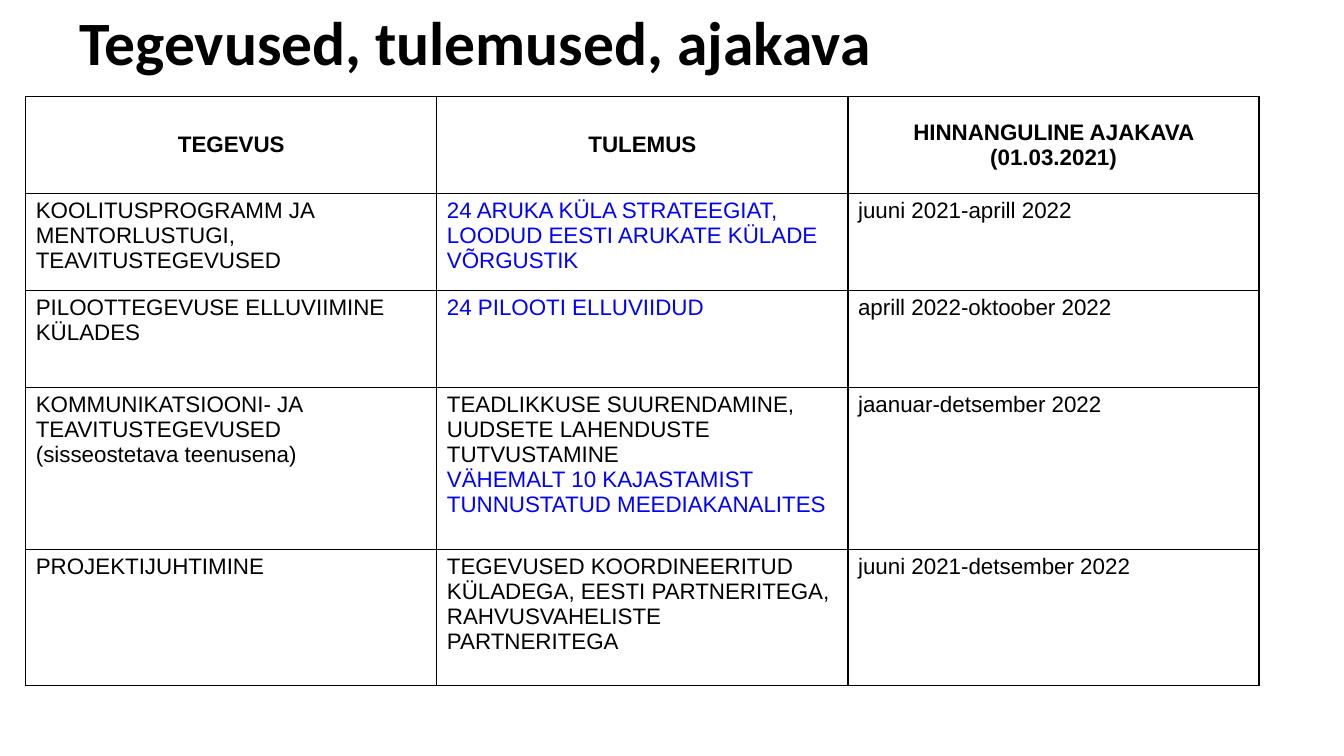
"""Build a slide with a table of project activities, results and schedule."""
from dataclasses import dataclass

from lxml import etree
from pptx import Presentation
from pptx.dml.color import RGBColor
from pptx.enum.text import MSO_ANCHOR, PP_ALIGN
from pptx.oxml.ns import qn
from pptx.slide import Slide
from pptx.table import _Cell
from pptx.util import Cm, Pt

LEFT, CENTER = PP_ALIGN.LEFT, PP_ALIGN.CENTER
TOP, MIDDLE = MSO_ANCHOR.TOP, MSO_ANCHOR.MIDDLE
TITLE_ONLY = 5

COLORS = {"text": "000000", "target": "0000FF", "border": "000000"}
HEADINGS = ("TEGEVUS", "TULEMUS", "HINNANGULINE AJAKAVA (01.03.2021)")
COLUMN_WIDTH = Cm(10.36)
HEADING_HEIGHT = Cm(2.44)


@dataclass(frozen=True)
class Line:
    """One paragraph of a table cell."""
    text: str
    color: str = "text"
    bold: bool = False


@dataclass(frozen=True)
class Activity:
    """One project activity with its results, schedule and row height in cm."""
    name: str
    results: tuple[Line, ...]
    schedule: str
    height: float


ACTIVITIES = (
    Activity(
        "KOOLITUSPROGRAMM JA MENTORLUSTUGI, TEAVITUSTEGEVUSED",
        (Line("24 ARUKA KÜLA STRATEEGIAT, LOODUD EESTI ARUKATE KÜLADE VÕRGUSTIK", "target"),),
        "juuni 2021-aprill 2022", 2.44),
    Activity(
        "PILOOTTEGEVUSE ELLUVIIMINE KÜLADES",
        (Line("24 PILOOTI ELLUVIIDUD", "target"),),
        "aprill 2022-oktoober 2022", 2.44),
    Activity(
        "KOMMUNIKATSIOONI- JA TEAVITUSTEGEVUSED (sisseostetava teenusena)",
        (Line("TEADLIKKUSE SUURENDAMINE, UUDSETE LAHENDUSTE TUTVUSTAMINE"),
         Line("VÄHEMALT 10 KAJASTAMIST TUNNUSTATUD MEEDIAKANALITES", "target")),
        "jaanuar-detsember 2022", 4.08),
    Activity(
        "PROJEKTIJUHTIMINE",
        (Line("TEGEVUSED KOORDINEERITUD KÜLADEGA, EESTI PARTNERITEGA, "
              "RAHVUSVAHELISTE PARTNERITEGA"),),
        "juuni 2021-detsember 2022", 3.44),
)


def add_borders(cell: _Cell) -> None:
    """Draw a thin solid line on all four sides of a cell."""
    properties = cell._tc.get_or_add_tcPr()
    for position, side in enumerate(("a:lnL", "a:lnR", "a:lnT", "a:lnB")):
        border = etree.Element(qn(side), w=str(Pt(1)))
        fill = etree.SubElement(border, qn("a:solidFill"))
        etree.SubElement(fill, qn("a:srgbClr"), val=COLORS["border"])
        properties.insert(position, border)


def fill_cell(cell: _Cell, lines: tuple[Line, ...], align: PP_ALIGN, anchor: MSO_ANCHOR) -> None:
    """Write and format the paragraphs of a cell."""
    cell.fill.background()
    add_borders(cell)
    cell.vertical_anchor = anchor
    cell.text = "\n".join(line.text for line in lines)
    for paragraph, line in zip(cell.text_frame.paragraphs, lines):
        paragraph.alignment = align
        paragraph.font.name = "Arial"
        paragraph.font.size = Pt(16)
        paragraph.font.bold = line.bold
        paragraph.font.color.rgb = RGBColor.from_string(COLORS[line.color])


def add_title(slide: Slide) -> None:
    """Place and format the slide title."""
    title = slide.shapes.title
    title.left, title.top, title.width, title.height = Cm(1.75), Cm(-0.69), Cm(29.21), Cm(3.68)
    title.text_frame.text = "Tegevused, tulemused, ajakava"
    title.text_frame.vertical_anchor = MIDDLE
    heading = title.text_frame.paragraphs[0]
    heading.alignment = LEFT
    heading.line_spacing = 0.9
    heading.font.name = "Calibri"
    heading.font.size = Pt(44)
    heading.font.bold = True
    heading.font.color.rgb = RGBColor.from_string(COLORS["text"])


def add_schedule(slide: Slide) -> None:
    """Add the table with one row per activity below the headings."""
    heights = [HEADING_HEIGHT, *(Cm(activity.height) for activity in ACTIVITIES)]
    schedule = slide.shapes.add_table(
        len(heights), len(HEADINGS), Cm(0.65), Cm(2.44),
        COLUMN_WIDTH * len(HEADINGS), sum(heights)).table
    schedule.first_row = schedule.horz_banding = False
    for column in schedule.columns:
        column.width = COLUMN_WIDTH
    for row, height in zip(schedule.rows, heights):
        row.height = height

    for column_index, heading in enumerate(HEADINGS):
        fill_cell(schedule.cell(0, column_index), (Line(heading, bold=True),), CENTER, MIDDLE)
    for row_index, activity in enumerate(ACTIVITIES, start=1):
        contents = ((Line(activity.name),), activity.results, (Line(activity.schedule),))
        for column_index, lines in enumerate(contents):
            fill_cell(schedule.cell(row_index, column_index), lines, LEFT, TOP)


def main() -> None:
    """Create and save the presentation."""
    presentation = Presentation()
    presentation.slide_width, presentation.slide_height = Cm(33.87), Cm(19.05)
    slide = presentation.slides.add_slide(presentation.slide_layouts[TITLE_ONLY])
    add_title(slide)
    add_schedule(slide)
    presentation.save("out.pptx")


if __name__ == "__main__":
    main()
